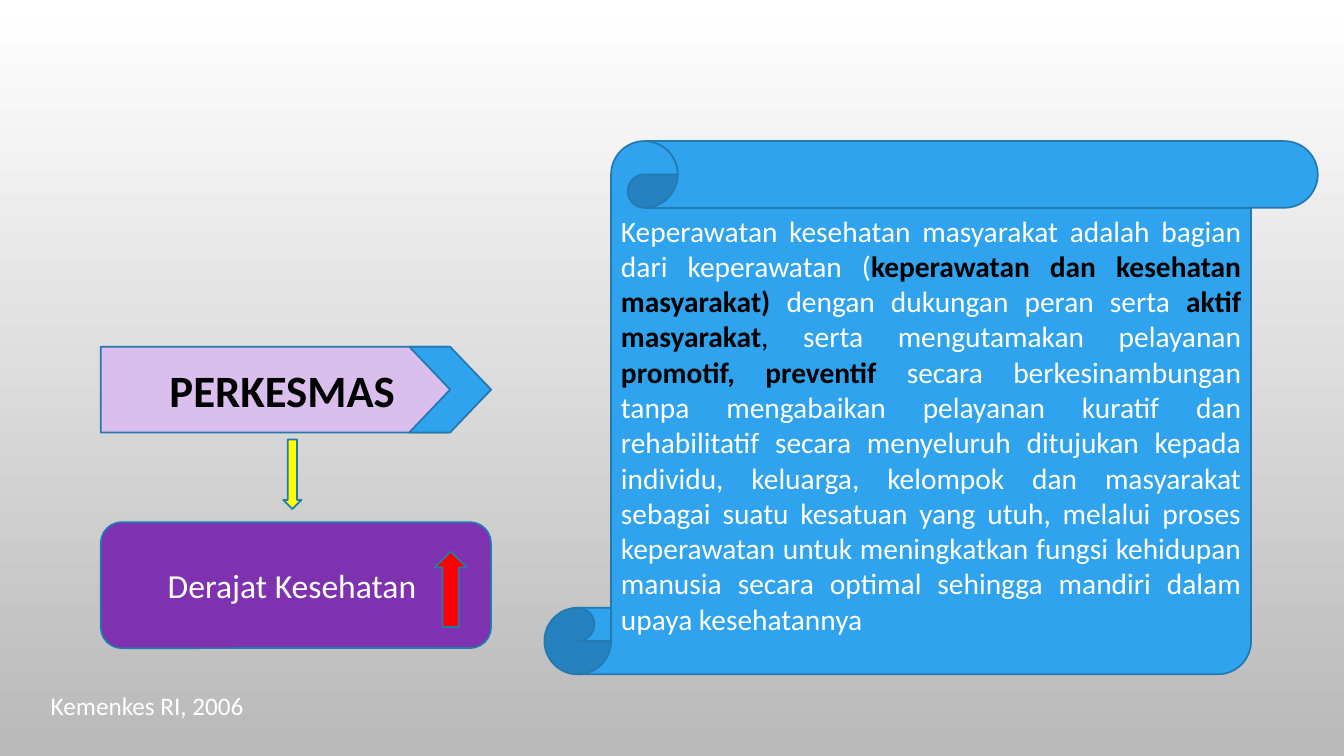
from dataclasses import dataclass
from typing import Any

from pptx import Presentation
from pptx.dml.color import RGBColor
from pptx.enum.shapes import MSO_SHAPE
from pptx.enum.text import MSO_ANCHOR, PP_ALIGN
from pptx.util import Inches, Pt

BOX = MSO_SHAPE.FLOWCHART_PROCESS
TAG = MSO_SHAPE.PENTAGON
CHEVRON = MSO_SHAPE.CHEVRON
SCROLL = MSO_SHAPE.VERTICAL_SCROLL
ROUND = MSO_SHAPE.ROUNDED_RECTANGLE
UP = MSO_SHAPE.UP_ARROW
DOWN = MSO_SHAPE.DOWN_ARROW
CENTER = PP_ALIGN.CENTER
JUSTIFY = PP_ALIGN.JUSTIFY
MIDDLE = MSO_ANCHOR.MIDDLE

WHITE, BLACK, GREY = "FFFFFF", "000000", "B9B9B9"
BLUE, EDGE = "2FA3EE", "2379B0"
LEFT, WIDE = 1, 3.87
TAG_TOP, TAG_HIGH = 3.44, 0.85
CHEV_WIDE = 0.81


@dataclass(frozen=True)
class Run:
    text: str
    size: float
    color: str = WHITE
    bold: bool = False


@dataclass(frozen=True)
class Part:
    kind: MSO_SHAPE
    left: float
    top: float
    width: float
    height: float
    fill: str = ""
    runs: tuple[Run, ...] = ()
    align: PP_ALIGN = CENTER


SCROLL_RUNS = (
    Run("Keperawatan kesehatan masyarakat adalah bagian dari keperawatan (", 21),
    Run("keperawatan dan kesehatan masyarakat) ", 21, BLACK, True),
    Run("dengan dukungan peran serta ", 21),
    Run("aktif masyarakat", 21, BLACK, True),
    Run(", ", 21, BLACK),
    Run("serta mengutamakan pelayanan ", 21),
    Run("promotif, preventif ", 21, BLACK, True),
    Run(
        "secara berkesinambungan tanpa mengabaikan pelayanan kuratif dan "
        "rehabilitatif secara menyeluruh ditujukan kepada individu, keluarga, "
        "kelompok dan masyarakat sebagai suatu kesatuan yang utuh, melalui "
        "proses keperawatan untuk meningkatkan fungsi kehidupan manusia secara "
        "optimal sehingga mandiri dalam upaya kesehatannya",
        21,
    ),
)

PARTS = (
    Part(BOX, 0.32, 6.78, 2.28, 0.43, runs=(Run("Kemenkes RI, 2006", 18),)),
    Part(TAG, LEFT, TAG_TOP, WIDE, TAG_HIGH, "DABEED",
         (Run("PERKESMAS", 32, BLACK, True), Run(" ", 18))),
    Part(CHEVRON, LEFT + WIDE - CHEV_WIDE, TAG_TOP, CHEV_WIDE, TAG_HIGH, BLUE),
    Part(SCROLL, 5.4, 1.4, 7.67, 5.29, BLUE, SCROLL_RUNS, JUSTIFY),
    Part(ROUND, LEFT, 5.18, WIDE, 1.25, "7E32B0",
         (Run("Derajat Kesehatan ", 24),)),
    Part(UP, 4.31, 5.47, 0.32, 0.75, "FF0000"),
    Part(DOWN, 2.81, 4.36, 0.18, 0.69, "FFFF00"),
)


def rgb(code: str) -> RGBColor:
    return RGBColor.from_string(code)


def apply(item: Any, form: dict[str, Any]) -> None:
    for name, value in form.items():
        setattr(item, name, value)


def draw(slide: Any, part: Part) -> None:
    place = (part.left, part.top, part.width, part.height)
    shape = slide.shapes.add_shape(part.kind, *map(Inches, place))
    shape.shadow.inherit = False
    if part.fill:
        shape.fill.solid()
        shape.fill.fore_color.rgb = rgb(part.fill)
        shape.line.color.rgb = rgb(EDGE)
        shape.line.width = Pt(1.25)
    else:
        shape.fill.background()
        shape.line.fill.background()
    frame = shape.text_frame
    apply(frame, {"word_wrap": True, "vertical_anchor": MIDDLE})
    para = frame.paragraphs[0]
    para.alignment = part.align
    for item in part.runs:
        run = para.add_run()
        run.text = item.text
        apply(run.font, {"name": "Calibri", "size": Pt(item.size), "bold": item.bold})
        run.font.color.rgb = rgb(item.color)


def paint(slide: Any) -> None:
    fill = slide.background.fill
    fill.gradient()
    fill.gradient_angle = 270
    for stop, code, pos in zip(fill.gradient_stops, (WHITE, GREY), (0, 1)):
        stop.color.rgb = rgb(code)
        stop.position = pos


def main() -> None:
    deck = Presentation()
    apply(deck, {"slide_width": Inches(13.33), "slide_height": Inches(7.5)})
    slide = deck.slides.add_slide(deck.slide_layouts[6])
    paint(slide)
    for part in PARTS:
        draw(slide, part)
    deck.save("out.pptx")


if __name__ == "__main__":
    main()
